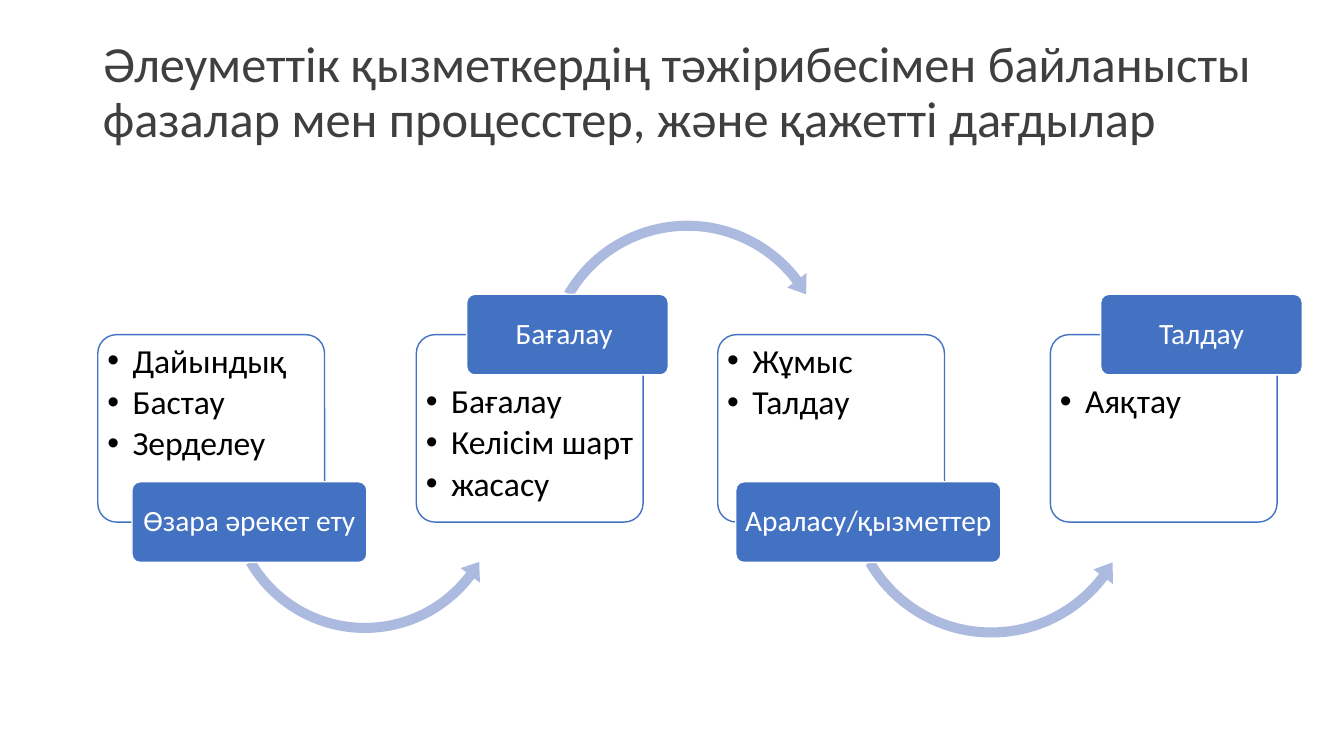
from dataclasses import dataclass
from math import cos, radians, sin, tan

from lxml.etree import SubElement
from pptx import Presentation
from pptx.dml.color import RGBColor
from pptx.enum.shapes import MSO_SHAPE as Preset
from pptx.enum.text import MSO_ANCHOR as Anchor, MSO_AUTO_SIZE as AutoSize, PP_ALIGN as Align
from pptx.oxml.ns import qn
from pptx.util import Pt

PX = 9144
FONT = "Calibri"
COLORS = {
    "white": "FFFFFF",
    "blue": "4372C3",
    "arrow": "ABBADE",
    "title": "3F3F3F",
    "text": "000000",
}
PANEL_TOP, PANEL_WIDTH, PANEL_HEIGHT = 332, 225, 186
LABEL_HEIGHT = 80


@dataclass
class Stage:
    """One phase: its panel, its label and the arrow (left, top, size, radius) leaving the label."""

    left: int
    items: list
    label: str
    label_offset: int
    label_width: int
    label_on_top: bool
    arrow: tuple = None


STAGES = [
    Stage(97, ["Дайындық", "Бастау", "Зерделеу"], "Өзара әрекет ету", 34, 233, False, (219, 349, 286, 131)),
    Stage(413, ["Бағалау", "Келісім шарт", "жасасу"], "Бағалау ", 50, 200, True, (534, 212, 296, 136)),
    Stage(712, ["Жұмыс", "Талдау"], "Араласу/қызметтер", 18, 263, False, (832, 337, 303, 139)),
    Stage(1042, ["Аяқтау"], "Талдау", 50, 200, True),
]


def color(name):
    """Return the named colour."""
    return RGBColor.from_string(COLORS[name])


def set_insets(frame, left, top, right, bottom):
    """Set the text margins in px."""
    frame.margin_left, frame.margin_top = left * PX, top * PX
    frame.margin_right, frame.margin_bottom = right * PX, bottom * PX


def format_paragraph(paragraph, size, color_name, align):
    """Format a paragraph and its runs."""
    paragraph.alignment = align
    paragraph.line_spacing = 0.9
    for run in paragraph.runs:
        run.font.name = FONT
        run.font.size = Pt(size)
        run.font.color.rgb = color(color_name)


def add_bullet(paragraph):
    """Give a paragraph a hanging round bullet."""
    properties = paragraph._p.get_or_add_pPr()
    properties.set("marL", str(25 * PX))
    properties.set("indent", str(-25 * PX))
    SubElement(properties, qn("a:buFont"), typeface="Arial")
    SubElement(properties, qn("a:buChar"), char="•")


def add_rounded_box(slide, box, fill, line):
    """Add a rounded rectangle in the given box."""
    shape = slide.shapes.add_shape(Preset.ROUNDED_RECTANGLE, *(value * PX for value in box))
    shape.adjustments[0] = 0.1
    shape.shadow.inherit = False
    shape.fill.solid()
    shape.fill.fore_color.rgb = color(fill)
    shape.line.color.rgb = color(line)
    shape.line.width = Pt(1)
    shape.text_frame.word_wrap = True
    return shape


def add_title(slide, box, text):
    """Place and format the title placeholder."""
    title = slide.shapes.title
    title.left, title.top, title.width, title.height = (value * PX for value in box)
    frame = title.text_frame
    frame.text = text
    frame.word_wrap = True
    frame.auto_size = AutoSize.NONE
    frame.vertical_anchor = Anchor.MIDDLE
    set_insets(frame, 10, 5, 10, 5)
    format_paragraph(frame.paragraphs[0], 36, "title", Align.LEFT)


def add_panel(slide, box, items, text_top):
    """Add the outlined panel with its bullet list."""
    panel = add_rounded_box(slide, box, "white", "blue")
    fill_color = panel._element.spPr.find(qn("a:solidFill"))[0]
    SubElement(fill_color, qn("a:alpha"), val="90000")
    frame = panel.text_frame
    frame.text = "\n".join(items)
    frame.vertical_anchor = Anchor.TOP
    set_insets(frame, 4, text_top, 4, 4)
    for index, paragraph in enumerate(frame.paragraphs):
        format_paragraph(paragraph, 24, "text", Align.LEFT)
        paragraph.space_before = Pt(3.6 if index else 0)
        add_bullet(paragraph)


def add_label(slide, box, text):
    """Add the filled label of a stage."""
    label = add_rounded_box(slide, box, "blue", "white")
    frame = label.text_frame
    frame.text = text
    frame.vertical_anchor = Anchor.MIDDLE
    set_insets(frame, 4, 3, 4, 3)
    format_paragraph(frame.paragraphs[0], 21, "white", Align.CENTER)


def arc_curves(radius, start, end):
    """Return two cubic curves along an arc, as polar control points."""
    step = (end - start) / 2
    handle = 4 / 3 * tan(radians(step) / 4)
    reach = radius * (1 + handle ** 2) ** 0.5
    swing = step / 2 - (step / 2 - 0)
    curves = []
    for first in (start, start + step):
        last = first + step
        controls = []
        for angle, turn in ((first, handle), (last, -handle)):
            x = radius * (cos(radians(angle)) - turn * sin(radians(angle)))
            y = radius * (sin(radians(angle)) + turn * cos(radians(angle)))
            controls.append((x, y))
        controls.append((radius * cos(radians(last)), radius * sin(radians(last))))
        curves.append(("cubicBezTo", controls))
    return curves


def add_curved_arrow(slide, box, radius, upward):
    """Add a circular arrow running left to right around the centre of its square box."""
    left, top, size = (value * PX for value in box)
    start, neck, tip, half_band, half_head = 150, 37, 30, 5, 12
    inner, outer = radius - half_band, radius + half_band
    side = -1 if upward else 1

    def corner(distance, angle, command="lnTo"):
        """Return a command to the point at a distance and angle from the centre."""
        return command, [(distance * cos(radians(angle)), distance * sin(radians(angle)))]

    commands = [
        corner(outer, start, "moveTo"), corner(inner, start),
        *arc_curves(inner, start, neck),
        corner(radius - half_head, neck), corner(radius, tip),
        corner(radius + half_head, neck), corner(outer, neck),
        *arc_curves(outer, neck, start), ("close", []),
    ]
    builder = slide.shapes.build_freeform(left, top, scale=1.0)
    builder.add_line_segments([(left + size, top), (left + size, top + size), (left, top + size)])
    arrow = builder.convert_to_shape()
    outline = next(arrow._element.iter(qn("a:path")))
    for segment in list(outline):
        outline.remove(segment)
    for command, points in commands:
        segment = SubElement(outline, qn(f"a:{command}"))
        for x, y in points:
            SubElement(segment, qn("a:pt"), x=str(round(size / 2 + x * PX)),
                       y=str(round(size / 2 + side * y * PX)))
    arrow.shadow.inherit = False
    arrow.fill.solid()
    arrow.fill.fore_color.rgb = color("arrow")
    arrow.line.fill.background()


def add_stage(slide, box, stage):
    """Add a panel, its arrow and the label straddling the panel edge."""
    left, top, width, height = box
    edge = top if stage.label_on_top else top + height
    add_panel(slide, box, stage.items, 44 if stage.label_on_top else 4)
    if stage.arrow:
        add_curved_arrow(slide, stage.arrow[:3], stage.arrow[3], stage.label_on_top)
    label_box = (left + stage.label_offset, edge - LABEL_HEIGHT // 2, stage.label_width, LABEL_HEIGHT)
    add_label(slide, label_box, stage.label)


def main():
    """Build and save the presentation."""
    presentation = Presentation()
    presentation.slide_width, presentation.slide_height = 4000 * PX // 3, 750 * PX
    slide = presentation.slides.add_slide(presentation.slide_layouts[5])
    add_title(slide, (92, 21, 1189, 144),
              "Әлеуметтік қызметкердің тәжірибесімен байланысты фазалар мен процесстер, "
              "және қажетті дағдылар")
    for stage in STAGES:
        add_stage(slide, (stage.left, PANEL_TOP, PANEL_WIDTH, PANEL_HEIGHT), stage)
    presentation.save("out.pptx")


if __name__ == "__main__":
    main()
